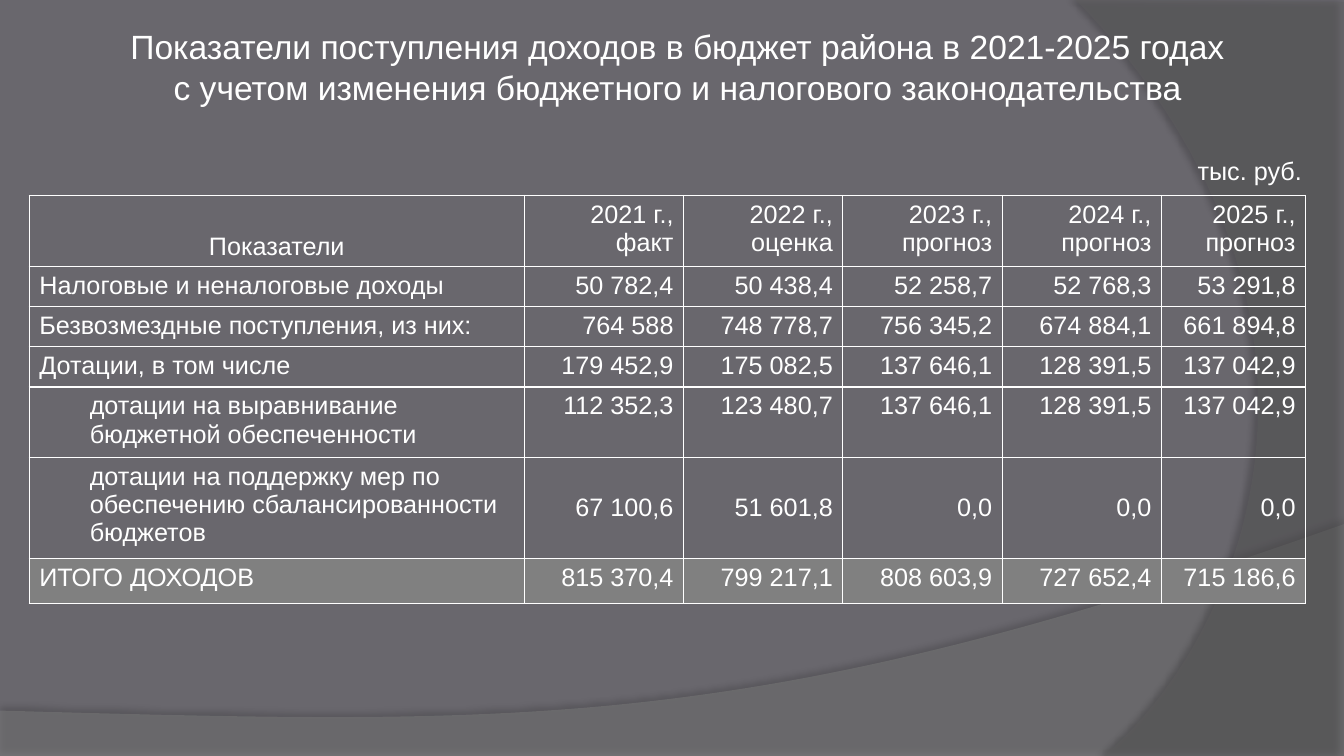
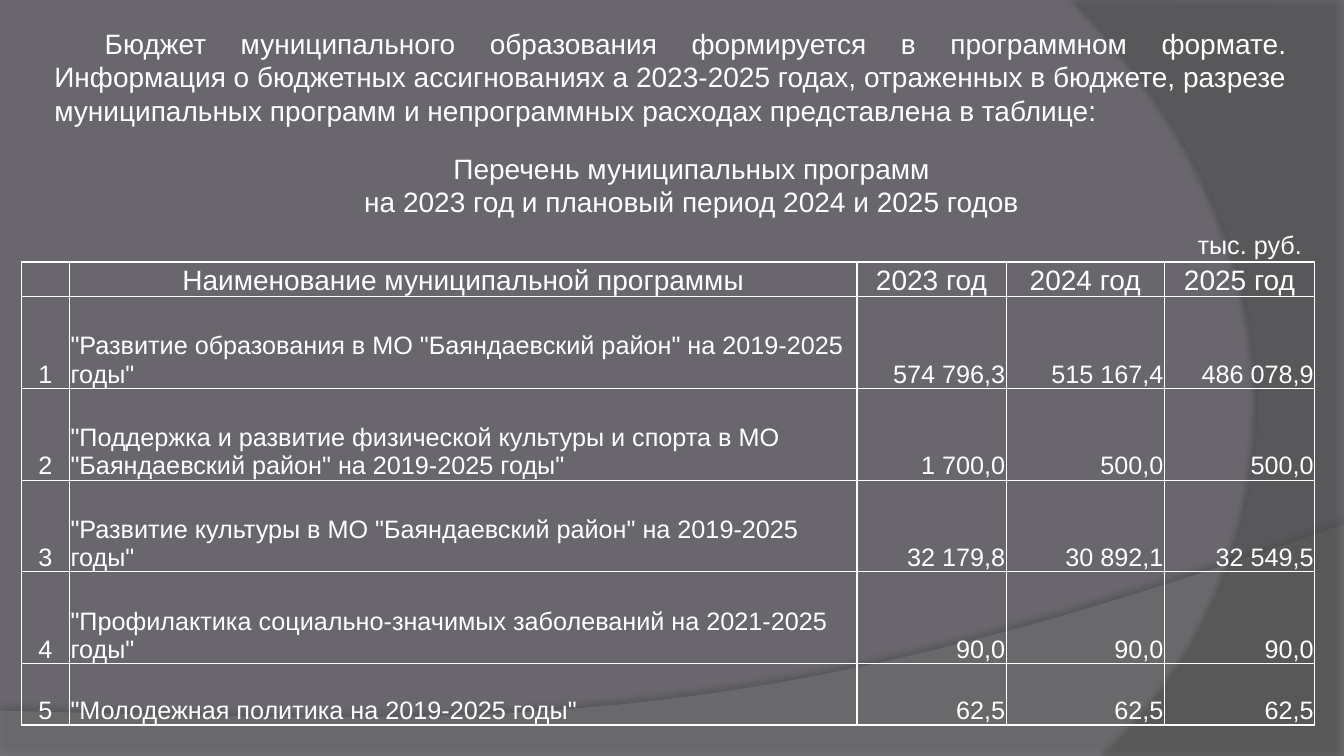
from dataclasses import dataclass
from typing import Any

from lxml.etree import SubElement
from pptx import Presentation
from pptx.dml.color import RGBColor
from pptx.enum.text import MSO_AUTO_SIZE as AutoSize
from pptx.enum.text import MSO_VERTICAL_ANCHOR as Anchor
from pptx.enum.text import PP_PARAGRAPH_ALIGNMENT as Align
from pptx.oxml import parse_xml
from pptx.oxml.ns import nsdecls, qn
from pptx.util import Inches, Pt

Point = tuple[float, float]


@dataclass(frozen=True)
class Theme:
    background: str = "69676D"
    wave: str = "7F7F7F"
    arc: str = "5E5E5E"
    total: str = "808080"
    ink: str = "FFFFFF"
    shadow: str = "000000"
    font: str = "Arial"
    title: int = 24
    lead: int = 20
    body: int = 18
    border: float = 1


THEME = Theme()
WIDTH, HEIGHT = 13.33, 7.5


@dataclass(frozen=True)
class Swoosh:
    corners: tuple[Point, ...]
    curve: tuple[Point, Point, Point]
    colour: str
    opacity: int
    shadow_opacity: int
    shadow_distance: float
    shadow_angle: int


@dataclass(frozen=True)
class TextBlock:
    at: tuple[float, float, float, float]
    lines: tuple[str, ...]
    size: int
    align: Align = Align.LEFT
    first_indent: float = 0


@dataclass(frozen=True)
class CellStyle:
    align: Align = Align.LEFT
    anchor: Anchor = Anchor.TOP
    size: int = THEME.body
    indent: float = 0
    fill: str | None = None
    margins: tuple[float, float, float, float] = (0.1, 0.1, 0.05, 0.05)


@dataclass(frozen=True)
class Grid:
    left: float
    top: float
    columns: tuple[float, ...]
    heights: tuple[float, ...]
    rows: tuple[tuple[str, ...], ...]


SWOOSHES = (
    Swoosh(((0, 7.05), (0, HEIGHT), (WIDTH, HEIGHT), (WIDTH, 5.2)),
           ((7.45, 7.29), (5.21, 7.19), (0, 7.05)), THEME.wave, 45, 35, 3.5, 270),
    Swoosh(((WIDTH, 0.02), (WIDTH, HEIGHT), (10.95, HEIGHT)),
           ((12.46, 6.19), (13.57, 3), (10.67, 0)), THEME.arc, 40, 45, 4, 180),
)

INCOME_TEXTS = (
    TextBlock((11.78, 1.49, 1.26, 0.4), ("тыс. руб.",), THEME.body),
    TextBlock((0.91, 0.21, 11.62, 0.91),
              ("Показатели поступления доходов в бюджет района в 2021-2025 годах",
               "с учетом изменения бюджетного и налогового законодательства"),
              THEME.title, Align.CENTER),
)
INCOME = Grid(
    0.29, 1.94, (4.91, 1.58, 1.58, 1.58, 1.58, 1.43),
    (0.7, 0.4, 0.4, 0.4, 0.7, 1, 0.45),
    (
        ("Показатели", "2021 г., факт", "2022 г., оценка", "2023 г., прогноз",
         "2024 г., прогноз", "2025 г., прогноз"),
        ("Налоговые и неналоговые доходы",
         "50 782,4", "50 438,4", "52 258,7", "52 768,3", "53 291,8"),
        ("Безвозмездные поступления, из них:",
         "764 588", "748 778,7", "756 345,2", "674 884,1", "661 894,8"),
        ("Дотации, в том числе",
         "179 452,9", "175 082,5", "137 646,1", "128 391,5", "137 042,9"),
        ("дотации на выравнивание бюджетной обеспеченности",
         "112 352,3", "123 480,7", "137 646,1", "128 391,5", "137 042,9"),
        ("дотации на поддержку мер по обеспечению сбалансированности бюджетов",
         "67 100,6", "51 601,8", "0,0", "0,0", "0,0"),
        ("ИТОГО ДОХОДОВ",
         "815 370,4", "799 217,1", "808 603,9", "727 652,4", "715 186,6"),
    ),
)

PROGRAMME_TEXTS = (
    TextBlock((0.44, 0.21, 12.42, 1.11),
              ("Бюджет муниципального образования формируется в программном формате. "
               "Информация о бюджетных ассигнованиях а 2023-2025 годах, отраженных в "
               "бюджете, разрезе муниципальных программ и непрограммных расходах "
               "представлена в таблице:",), THEME.lead, Align.JUSTIFY, 0.5),
    TextBlock((2.49, 1.45, 8.74, 0.77),
              ("Перечень муниципальных программ",
               "на 2023 год и плановый период 2024 и 2025 годов"),
              THEME.lead, Align.CENTER),
    TextBlock((11.78, 2.23, 1.26, 0.4), ("тыс. руб.",), THEME.body),
)
PROGRAMMES = Grid(
    0.21, 2.6, (0.48, 7.81, 1.48, 1.57, 1.49),
    (0.34, 0.91, 0.91, 0.91, 0.91, 0.61),
    (
        ("", "Наименование муниципальной программы", "2023 год", "2024 год", "2025 год"),
        ("1", '"Развитие образования в МО "Баяндаевский район" на 2019-2025 годы"',
         "574 796,3", "515 167,4", "486 078,9"),
        ("2", '"Поддержка и развитие физической культуры и спорта в МО '
              '"Баяндаевский район" на 2019-2025 годы"', "1 700,0", "500,0", "500,0"),
        ("3", '"Развитие культуры в МО "Баяндаевский район" на 2019-2025 годы"',
         "32 179,8", "30 892,1", "32 549,5"),
        ("4", '"Профилактика социально-значимых заболеваний на 2021-2025 годы"',
         "90,0", "90,0", "90,0"),
        ("5", '"Молодежная политика на 2019-2025 годы"', "62,5", "62,5", "62,5"),
    ),
)


def income_style(row: int, column: int) -> CellStyle:
    header, subsidy, total = row == 0, row in (4, 5), row == 6
    fill = THEME.total if total else None
    if column == 0:
        return CellStyle(Align.CENTER if header else Align.LEFT,
                         Anchor.BOTTOM if header else Anchor.TOP,
                         indent=0.5 if subsidy else 0, fill=fill)
    return CellStyle(Align.RIGHT, Anchor.MIDDLE if row == 5 else Anchor.TOP, fill=fill)


def programme_style(row: int, column: int) -> CellStyle:
    if row == 0 or column == 0:
        align = Align.CENTER
    else:
        align = Align.LEFT if column == 1 else Align.RIGHT
    return CellStyle(align, Anchor.BOTTOM, THEME.body if row else THEME.lead,
                     margins=(0.01, 0.01, 0.01, 0))


def apply_format(target: Any, values: dict[str, Any]) -> None:
    for name, value in values.items():
        setattr(target, name, value)


def write_paragraph(para: Any, text: str, size: int, align: Align,
                    left: float = 0, first: float = 0) -> None:
    para.alignment = align
    if left or first:
        properties = para._p.get_or_add_pPr()
        properties.set("marL", str(Inches(left)))
        properties.set("indent", str(Inches(first)))
    if text:
        span = para.add_run()
        span.text = text
        apply_format(span.font, {"name": THEME.font, "size": Pt(size)})
        span.font.color.rgb = RGBColor.from_string(THEME.ink)


def add_text(page: Any, block: TextBlock) -> None:
    box = page.shapes.add_textbox(*map(Inches, block.at))
    frame = box.text_frame
    apply_format(frame, {"word_wrap": True, "auto_size": AutoSize.SHAPE_TO_FIT_TEXT})
    for index, line in enumerate(block.lines):
        para = frame.add_paragraph() if index else frame.paragraphs[0]
        write_paragraph(para, line, block.size, block.align, first=block.first_indent)


def add_borders(cell: Any) -> None:
    properties = cell._tc.get_or_add_tcPr()
    for index, side in enumerate(("lnL", "lnR", "lnT", "lnB")):
        properties.insert(index, parse_xml(
            f'<a:{side} {nsdecls("a")} w="{Pt(THEME.border)}"><a:solidFill>'
            f'<a:srgbClr val="{THEME.ink}"/></a:solidFill></a:{side}>'))


def fill_cell(cell: Any, text: str, style: CellStyle) -> None:
    sides = ("margin_left", "margin_right", "margin_top", "margin_bottom")
    apply_format(cell, dict(zip(sides, map(Inches, style.margins))))
    cell.vertical_anchor = style.anchor
    if style.fill:
        cell.fill.solid()
        cell.fill.fore_color.rgb = RGBColor.from_string(style.fill)
    else:
        cell.fill.background()
    add_borders(cell)
    write_paragraph(cell.text_frame.paragraphs[0], text, style.size, style.align,
                    left=style.indent)


def add_grid(page: Any, grid: Grid, style_of: Any) -> None:
    frame = page.shapes.add_table(
        len(grid.rows), len(grid.columns), Inches(grid.left), Inches(grid.top),
        Inches(sum(grid.columns)), Inches(sum(grid.heights)))
    table = frame.table
    apply_format(table, {"first_row": False, "horz_banding": False})
    for column, width in zip(table.columns, grid.columns):
        column.width = Inches(width)
    for row, height in zip(table.rows, grid.heights):
        row.height = Inches(height)
    for r, texts in enumerate(grid.rows):
        for c, text in enumerate(texts):
            fill_cell(table.cell(r, c), text, style_of(r, c))


def bezier(start: Point, curve: tuple[Point, Point, Point], steps: int = 60) -> list[Point]:
    """Sample a cubic curve, leaving out its start."""
    points = []
    for step in range(1, steps + 1):
        t = step / steps
        weights = ((1 - t) ** 3, 3 * t * (1 - t) ** 2, 3 * t * t * (1 - t), t ** 3)
        x, y = (sum(w * p[axis] for w, p in zip(weights, (start, *curve)))
                for axis in (0, 1))
        points.append((x, y))
    return points


def add_colour(parent: Any, colour: str, opacity: int) -> None:
    node = SubElement(parent, qn("a:srgbClr"), val=colour)
    SubElement(node, qn("a:alpha"), val=str(opacity * 1000))


def add_swoosh(page: Any, swoosh: Swoosh) -> Any:
    points = [*swoosh.corners, *bezier(swoosh.corners[-1], swoosh.curve)]
    outline = [(Inches(x), Inches(y)) for x, y in points]
    builder = page.shapes.build_freeform(*outline[0])
    builder.add_line_segments(outline[1:], close=True)
    shape = builder.convert_to_shape()
    shape.line.fill.background()
    shape.fill.solid()
    shape.shadow.inherit = False
    properties = shape.element.spPr
    solid = properties.find(qn("a:solidFill"))
    solid.clear()
    add_colour(solid, swoosh.colour, swoosh.opacity)
    shadow = SubElement(properties.find(qn("a:effectLst")), qn("a:outerShdw"),
                        blurRad=str(Pt(4)), dist=str(Pt(swoosh.shadow_distance)),
                        dir=str(swoosh.shadow_angle * 60000), rotWithShape="0")
    add_colour(shadow, THEME.shadow, swoosh.shadow_opacity)
    return shape


def dress_master(deck: Any, page: Any) -> None:
    """Give the master its background and swooshes; page only serves to build them."""
    master = deck.slide_master
    master.background.fill.solid()
    master.background.fill.fore_color.rgb = RGBColor.from_string(THEME.background)
    for number, swoosh in enumerate(SWOOSHES, start=101):
        element = add_swoosh(page, swoosh).element
        element.xpath("./p:nvSpPr/p:cNvPr")[0].set("id", str(number))
        master.shapes.element.append(element)


def main() -> None:
    deck = Presentation()
    apply_format(deck, {"slide_width": Inches(WIDTH), "slide_height": Inches(HEIGHT)})
    blank = deck.slide_layouts[6]
    contents = ((INCOME_TEXTS, INCOME, income_style),
                (PROGRAMME_TEXTS, PROGRAMMES, programme_style))
    pages = [deck.slides.add_slide(blank) for _ in contents]
    dress_master(deck, pages[0])
    for page, (texts, grid, style_of) in zip(pages, contents):
        add_grid(page, grid, style_of)
        for block in texts:
            add_text(page, block)
    deck.save("out.pptx")


if __name__ == "__main__":
    main()
